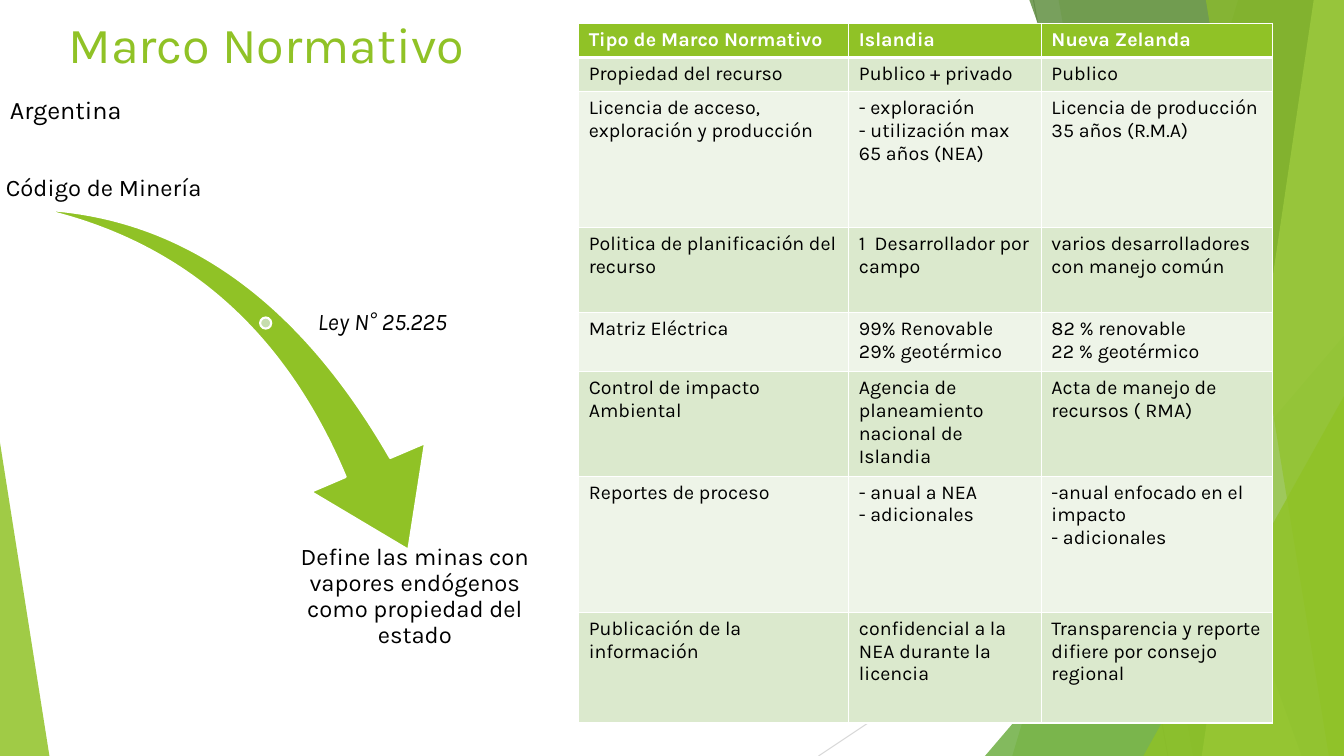
from lxml import etree
from pptx import Presentation, util as u
from pptx.dml.color import RGBColor
from pptx.enum import shapes, text
from pptx.oxml.ns import qn

WIDTH, HEIGHT = u.Inches(13.33), u.Inches(7.5)
FONT = "Karla"
GREEN, WHITE, BLACK = "90C226", "FFFFFF", "000000"
ROW_FILLS = ("EEF4E8", "DBE9CD")

# Background, back to front: outline, fill, opacity, left edge in percent.
# A band has its top and bottom left corners, a triangle its left, top, width and apex.
BACKDROP = [
    ("band", GREEN, 30, (92.12, 75.32)),
    ("band", GREEN, 20, (78.77, 88.75)),
    ("triangle", "54A021", 72, (73.29, 44.4, 26.71, 1)),
    ("band", "3F7819", 70, (76.59, 96.85)),
    ("band", "C0E474", 70, (97.75, 89.42)),
    ("band", GREEN, 65, (89.72, 98.87)),
    ("triangle", GREEN, 80, (85.07, 52.4, 14.93, 1)),
    ("triangle", GREEN, 85, (0, 58.53, 3.68, 0)),
]

COLUMNS = (20.1, 14.33, 17.18)
ROWS = (4.53, 4.53, 18, 11.2, 7.87, 11.2, 18, 14.67)
CELLS = [
    ("Tipo de Marco Normativo", "Islandia", "Nueva Zelanda"),
    ("Propiedad del recurso", "Publico + privado", "Publico"),
    ("Licencia de acceso, exploración y producción",
     "- exploración\n- utilización max 65 años (NEA)",
     "Licencia de producción 35 años (R.M.A)"),
    ("Politica de planificación del recurso", "1  Desarrollador por campo",
     "varios desarrolladores con manejo común"),
    ("Matriz Eléctrica", "99% Renovable\n29% geotérmico",
     "82 % renovable\n22 % geotérmico"),
    ("Control de impacto Ambiental", "Agencia de planeamiento nacional de Islandia",
     "Acta de manejo de recursos ( RMA)"),
    ("Reportes de proceso", "- anual a NEA\n- adicionales",
     "-anual enfocado en el impacto\n- adicionales"),
    ("Publicación de la información", "confidencial a la NEA durante la licencia",
     "Transparencia y reporte difiere por consejo regional"),
]


def across(percent):
    return u.Emu(round(WIDTH * percent / 100))


def down(percent):
    return u.Emu(round(HEIGHT * percent / 100))


def place(left, top, width, height):
    return across(left), down(top), across(width), down(height)


def color(value):
    return RGBColor.from_string(value)


def paint(shape, fill, opacity=100, outline=None):
    shape.shadow.inherit = False
    shape.fill.solid()
    shape.fill.fore_color.rgb = color(fill)
    if opacity < 100:
        tint = shape.fill._xPr.find(qn("a:solidFill"))[0]
        etree.SubElement(tint, qn("a:alpha"), val=str(opacity * 1000))
    if outline:
        shape.line.color.rgb = color(outline)
        shape.line.width = u.Pt(1.5)
    else:
        shape.line.fill.background()


def style(frame, size, ink, bold=False, italic=False):
    for para in frame.paragraphs:
        for span in para.runs:
            font = span.font
            font.name, font.size = FONT, u.Pt(size)
            font.bold, font.italic = bold, italic
            font.color.rgb = color(ink)


def add_line(page, start, end, ink):
    line = page.shapes.add_connector(
        shapes.MSO_CONNECTOR.STRAIGHT,
        across(start[0]), down(start[1]), across(end[0]), down(end[1]))
    line.line.color.rgb = color(ink)
    line.line.width = u.Pt(0.75)
    etree.SubElement(line._element.spPr, qn("a:effectLst"))


def add_band(page, top_left, bottom_left):
    builder = page.shapes.build_freeform(across(top_left), 0)
    builder.add_line_segments(
        [(WIDTH, 0), (WIDTH, HEIGHT), (across(bottom_left), HEIGHT)], close=True)
    return builder.convert_to_shape()


def add_triangle(page, left, top, width, apex):
    triangle = page.shapes.add_shape(
        shapes.MSO_SHAPE.ISOSCELES_TRIANGLE, *place(left, top, width, 100 - top))
    triangle.adjustments[0] = apex
    return triangle


def add_label(page, area, words, size, ink=BLACK, align=text.PP_ALIGN.LEFT,
              anchor=text.MSO_ANCHOR.TOP, inset=None, spacing=None, italic=False):
    box = page.shapes.add_textbox(*place(*area))
    frame = box.text_frame
    frame.word_wrap = True
    frame.vertical_anchor = anchor
    if inset is not None:
        frame.margin_left = frame.margin_right = u.Inches(inset)
        frame.margin_top = frame.margin_bottom = u.Inches(inset)
    frame.text = words
    frame.paragraphs[0].alignment = align
    frame.paragraphs[0].line_spacing = spacing
    style(frame, size, ink, italic=italic)


def add_borders(cell, top, bottom):
    properties = cell._tc.get_or_add_tcPr()
    for side, points in (("L", 1), ("R", 1), ("T", top), ("B", bottom)):
        line = etree.SubElement(properties, qn(f"a:ln{side}"), w=str(u.Pt(points)))
        fill = etree.SubElement(line, qn("a:solidFill"))
        etree.SubElement(fill, qn("a:srgbClr"), val=WHITE)


def add_backdrop(page):
    add_line(page, (76.9, 0), (86.9, 100), "BFBFBF")
    add_line(page, (100, 53.7), (60.9, 100), "D9D9D9")
    makers = {"band": add_band, "triangle": add_triangle}
    for kind, fill, opacity, outline in BACKDROP:
        paint(makers[kind](page, *outline), fill, opacity)


def add_law_arrow(page):
    arrow = page.shapes.add_shape(
        shapes.MSO_SHAPE.SWOOSH_ARROW, *place(2.33, 29.47, 32.11, 39.73))
    arrow.adjustments[0], arrow.adjustments[1] = 0.16, 0.31
    arrow.rotation = 73.3
    paint(arrow, GREEN, outline=WHITE)
    dot = page.shapes.add_shape(shapes.MSO_SHAPE.OVAL, *place(19.35, 42, 0.83, 1.47))
    paint(dot, "C6DDAD", outline=WHITE)

    step = {"size": 17, "inset": 0.02, "spacing": 0.9}
    add_label(page, (0.15, 16.4, 15.15, 10.53), "Código de Minería",
              align=text.PP_ALIGN.CENTER, anchor=text.MSO_ANCHOR.BOTTOM, **step)
    add_label(page, (23.48, 37.47, 18, 10.53), "Ley N° 25.225",
              anchor=text.MSO_ANCHOR.MIDDLE, italic=True, **step)
    add_label(page, (20.63, 71.87, 20.48, 10.53),
              "Define las minas con vapores endógenos como propiedad del estado",
              align=text.PP_ALIGN.CENTER, **step)


def add_comparison(page):
    table = page.shapes.add_table(
        len(ROWS), len(COLUMNS), *place(43.06, 3.07, sum(COLUMNS), sum(ROWS))).table
    for column, width in zip(table.columns, COLUMNS):
        column.width = across(width)
    for index, (row, height) in enumerate(zip(table.rows, ROWS)):
        row.height = down(height)
        header = index == 0
        for cell, words in zip(row.cells, CELLS[index]):
            cell.text_frame.text = words
            style(cell.text_frame, 14, WHITE if header else BLACK, bold=header)
            add_borders(cell, 3 if index == 1 else 1, 3 if header else 1)
            cell.fill.solid()
            cell.fill.fore_color.rgb = color(GREEN if header else ROW_FILLS[index % 2])


def main():
    deck = Presentation()
    deck.slide_width, deck.slide_height = WIDTH, HEIGHT
    page = deck.slides.add_slide(deck.slide_layouts[6])
    add_backdrop(page)
    add_label(page, (4.35, 1.07, 70.52, 19.2), "Marco Normativo", 36, GREEN)
    add_law_arrow(page)
    add_comparison(page)
    add_label(page, (0, 11.87, 50.56, 5.33), "Argentina", 18)
    deck.save("out.pptx")


if __name__ == "__main__":
    main()
